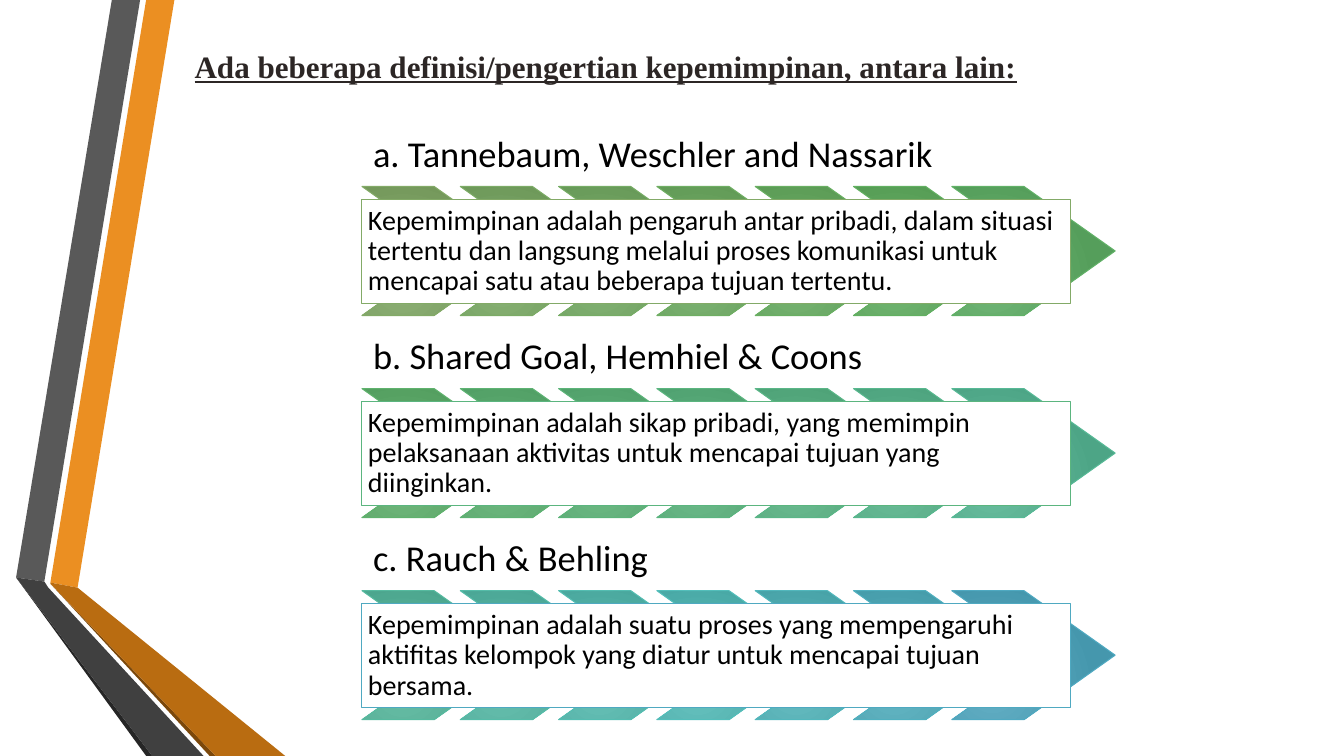
from dataclasses import dataclass

from lxml import etree
from pptx import Presentation
from pptx.dml.color import RGBColor
from pptx.enum.shapes import MSO_SHAPE
from pptx.enum.text import MSO_ANCHOR, MSO_AUTO_SIZE, PP_ALIGN
from pptx.oxml.ns import qn
from pptx.util import Inches, Pt

CHEVRON = MSO_SHAPE.CHEVRON
RECTANGLE = MSO_SHAPE.RECTANGLE
LEFT = PP_ALIGN.LEFT
MIDDLE, BOTTOM = MSO_ANCHOR.MIDDLE, MSO_ANCHOR.BOTTOM
NO_AUTOFIT = MSO_AUTO_SIZE.NONE


@dataclass(frozen=True)
class Theme:
    title_font: str = "Times New Roman"
    body_font: str = "Calibri"
    title_size: float = 22.2
    heading_size: float = 26
    definition_size: float = 20
    title_color: str = "2C2625"
    text_color: str = "000000"
    box_color: str = "FFFFFF"
    line_width: float = 0.75
    # Chevron number: (gradient start, gradient end, outline)
    ramp: tuple = (
        (0, ("8EB176", "74985B", "83AA67")),
        (5, ("72B672", "569D55", "62B061")),
        (10, ("6DBB8A", "50A271", "5BB57F")),
        (13, ("6ABE9F", "4DA586", "57B996")),
        (17, ("67C2BF", "49A9A6", "53BEBA")),
        (20, ("64B0C6", "4597AD", "4FA9C1")),
    )

    def shades(self, number):
        """Blend the two ramp entries on either side of a chevron number."""
        for (start, lows), (end, highs) in zip(self.ramp, self.ramp[1:]):
            if number <= end:
                share = (number - start) / (end - start)
                return [blend(low, high, share) for low, high in zip(lows, highs)]


def blend(low, high, share):
    pairs = zip(RGBColor.from_string(low), RGBColor.from_string(high))
    return str(RGBColor(*(round(a + (b - a) * share) for a, b in pairs)))


class SlideBuilder:
    def __init__(self, slide, theme):
        self.slide = slide
        self.theme = theme

    def set_text(self, frame, text, font, size, color, anchor, inset):
        frame.text = text
        frame.word_wrap = True
        frame.auto_size = NO_AUTOFIT
        frame.vertical_anchor = anchor
        frame.margin_left = frame.margin_right = Inches(inset)
        frame.margin_top = frame.margin_bottom = Inches(inset)
        paragraph = frame.paragraphs[0]
        paragraph.alignment = LEFT
        paragraph.line_spacing = 0.9
        run = paragraph.runs[0]
        run.font.name = font
        run.font.size = Pt(size)
        run.font.color.rgb = RGBColor.from_string(color)
        return run

    def title(self, text, left, top, width, height):
        title = self.slide.shapes.title
        title.left, title.top = Inches(left), Inches(top)
        title.width, title.height = Inches(width), Inches(height)
        run = self.set_text(title.text_frame, text, self.theme.title_font,
                            self.theme.title_size, self.theme.title_color, MIDDLE, 0.1)
        run.font.bold = True
        run.font.underline = True

    def ribbon(self, color, points):
        corners = [(Inches(x), Inches(y)) for x, y in points]
        outline = self.slide.shapes.build_freeform(*corners[0])
        outline.add_line_segments(corners[1:], close=True)
        ribbon = outline.convert_to_shape()
        ribbon.shadow.inherit = False
        ribbon.fill.solid()
        ribbon.fill.fore_color.rgb = RGBColor.from_string(color)
        ribbon.line.fill.background()

    def outlined(self, kind, left, top, width, height, line_color):
        shape = self.slide.shapes.add_shape(
            kind, Inches(left), Inches(top), Inches(width), Inches(height))
        shape.shadow.inherit = False
        shape.line.color.rgb = RGBColor.from_string(line_color)
        shape.line.width = Pt(self.theme.line_width)
        return shape

    def chevron(self, number, left, top, width, height):
        *gradient, outline = self.theme.shades(number)
        chevron = self.outlined(CHEVRON, left, top, width, height, outline)
        chevron.adjustments[0] = 0.706
        chevron.fill.gradient()
        for stop, color in zip(chevron.fill.gradient_stops, gradient):
            stop.color.rgb = RGBColor.from_string(color)
        # Radial gradient in place of the default linear one
        grad_fill = chevron._element.spPr.find(qn("a:gradFill"))
        linear = grad_fill.find(qn("a:lin"))
        radial = etree.Element(qn("a:path"), {"path": "circle"})
        etree.SubElement(radial, qn("a:fillToRect"),
                         {"l": "50000", "t": "100000", "r": "100000", "b": "50000"})
        grad_fill.replace(linear, radial)

    def heading(self, text, left, top, width, height):
        heading = self.slide.shapes.add_textbox(
            Inches(left), Inches(top), Inches(width), Inches(height))
        self.set_text(heading.text_frame, text, self.theme.body_font,
                      self.theme.heading_size, self.theme.text_color, BOTTOM, 0.11)

    def definition(self, text, number, left, top, width, height):
        outline = self.theme.shades(number)[-1]
        box = self.outlined(RECTANGLE, left, top, width, height, outline)
        box.fill.solid()
        box.fill.fore_color.rgb = RGBColor.from_string(self.theme.box_color)
        self.set_text(box.text_frame, text, self.theme.body_font,
                      self.theme.definition_size, self.theme.text_color, MIDDLE, 0.06)


RIBBONS = [
    ("EB8F22", [(0.5, 5.78), (0.77, 5.83), (1.73, 0), (1.45, 0)]),
    ("595959", [(1.39, 0), (1.11, 0), (0.16, 5.73), (0.44, 5.77)]),
    ("262626", [(0.16, 5.73), (1.45, 7.5), (1.51, 7.5)]),
    ("7B480B", [(0.5, 5.79), (2.08, 7.5), (2.14, 7.5)]),
    ("B96C11", [(0.5, 5.79), (2.14, 7.5), (2.83, 7.5), (0.77, 5.83), (0.5, 5.78)]),
    ("404040", [(2.02, 7.5), (0.48, 5.83), (0.44, 5.77), (0.16, 5.73), (1.51, 7.5)]),
]

DEFINITIONS = [
    ("a. Tannebaum, Weschler and Nassarik",
     "Kepemimpinan adalah pengaruh antar pribadi, dalam situasi tertentu dan langsung "
     "melalui proses komunikasi untuk mencapai satu atau beberapa tujuan tertentu."),
    ("b. Shared Goal, Hemhiel & Coons",
     "Kepemimpinan adalah sikap pribadi, yang memimpin pelaksanaan aktivitas untuk "
     "mencapai tujuan yang diinginkan."),
    ("c. Rauch & Behling",
     "Kepemimpinan adalah suatu proses yang mempengaruhi aktifitas kelompok yang "
     "diatur untuk mencapai tujuan bersama."),
]

LIST_LEFT, LIST_TOP = 3.59, 1.22
ROW_PITCH = 4.01 / 2
CHEVRONS_PER_ROW = 7
CHEVRON_PITCH = 5.85 / (CHEVRONS_PER_ROW - 1)


def main():
    presentation = Presentation()
    presentation.slide_width = Inches(13.33)
    presentation.slide_height = Inches(7.5)
    title_only = presentation.slide_layouts[5]
    builder = SlideBuilder(presentation.slides.add_slide(title_only), Theme())

    # Folded ribbons along the left edge
    for color, points in RIBBONS:
        builder.ribbon(color, points)

    builder.title("Ada beberapa definisi/pengertian kepemimpinan, antara lain:",
                  1.83, 0.42, 9.01, 0.52)

    # Each definition: heading, band of chevrons, text box over the band
    for row, (author, definition) in enumerate(DEFINITIONS):
        top = LIST_TOP + row * ROW_PITCH
        builder.heading(author, LIST_LEFT, top, 6.94, 0.63)
        for column in range(CHEVRONS_PER_ROW):
            builder.chevron(row * CHEVRONS_PER_ROW + column,
                            LIST_LEFT + column * CHEVRON_PITCH, top + 0.63, 1.62, 1.28)
        builder.definition(definition, row * 10, LIST_LEFT, top + 0.76, 7.03, 1.03)

    presentation.save("out.pptx")


if __name__ == "__main__":
    main()
